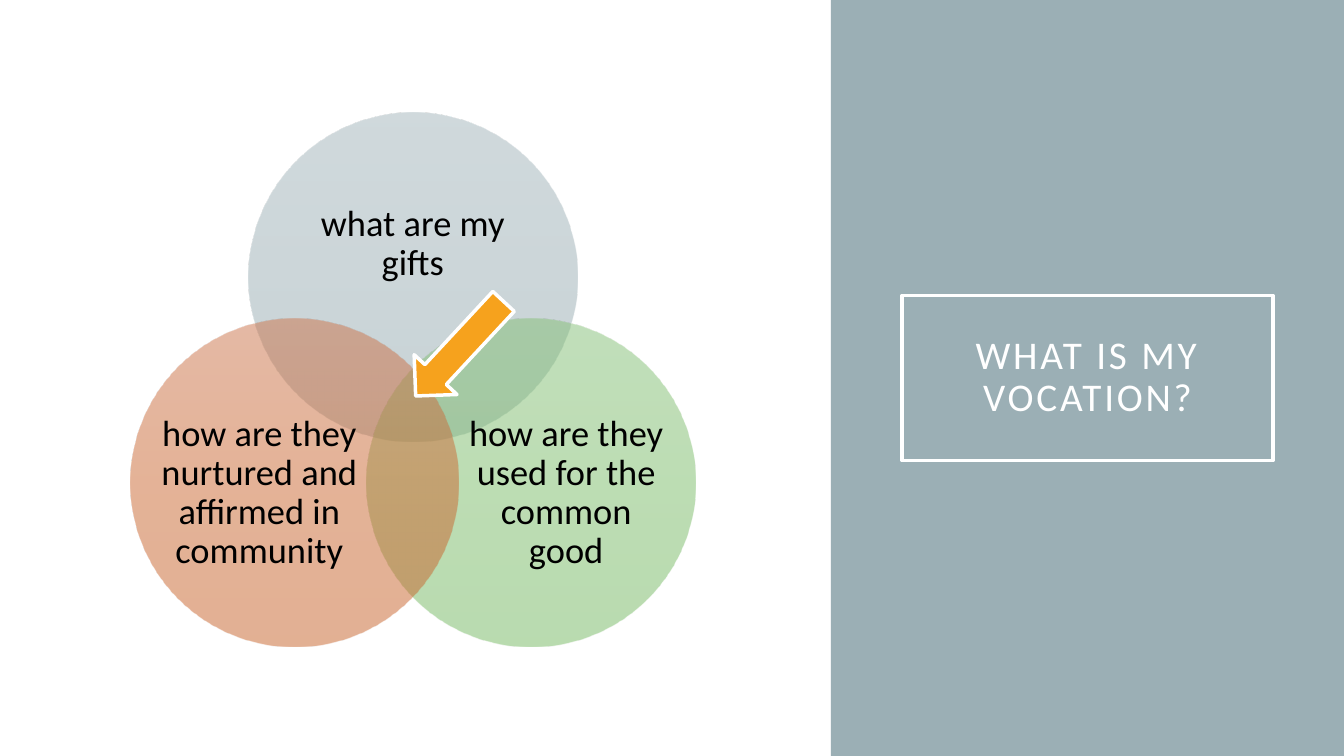
"""Build a slide with a three-circle Venn diagram and a title panel."""
import math
from dataclasses import dataclass

from lxml import etree
from pptx import Presentation
from pptx import util as u
from pptx.dml.color import RGBColor
from pptx.enum import shapes, text
from pptx.oxml import ns


@dataclass(frozen=True)
class Theme:
    """Colours, font and sizes of the slide."""
    panel: str = "9BAFB5"
    white: str = "FFFFFF"
    black: str = "000000"
    arrow: str = "F6A21D"
    gray: tuple = ("A3B5BB", "9BAFB5", "93A9AF")
    green: tuple = ("85C076", "7ABD68", "73B960")
    orange: tuple = ("CC734B", "CB662F", "C86128")
    font: str = "Calibri"
    title_size: float = 28
    label_size: float = 26
    outline: float = 2.5


THEME = Theme()
VENN_CENTER = (294.9, 295.8)
VENN_RADIUS = 97.7
CIRCLE_SIZE = 234.7


def add_figure(slide, kind, box, fill=None, line=None):
    """Add a preset shape with an optional solid fill and outline."""
    shape = slide.shapes.add_shape(kind, *(u.Pt(length) for length in box))
    shape.shadow.inherit = False
    if fill:
        shape.fill.solid()
        shape.fill.fore_color.rgb = RGBColor.from_string(fill)
    else:
        shape.fill.background()
    if line:
        shape.line.color.rgb = RGBColor.from_string(line)
        shape.line.width = u.Pt(THEME.outline)
    else:
        shape.line.fill.background()
    return shape


def set_glass_gradient(shape, colors):
    """Give the shape a half-transparent gradient from top to bottom."""
    properties = shape.fill._xPr
    gradient = etree.Element(ns.qn("a:gradFill"), rotWithShape="1")
    stops = etree.SubElement(gradient, ns.qn("a:gsLst"))
    for index, color in enumerate(colors):
        stop = etree.SubElement(stops, ns.qn("a:gs"), pos=str(index * 50000))
        value = etree.SubElement(stop, ns.qn("a:srgbClr"), val=color)
        etree.SubElement(value, ns.qn("a:alpha"), val="50000")
    etree.SubElement(gradient, ns.qn("a:lin"), ang="5400000", scaled="0")
    properties.replace(properties.find(ns.qn("a:noFill")), gradient)


def write_text(shape, words, size, color, margin=0, spacing=0):
    """Write one centred paragraph into the shape."""
    frame = shape.text_frame
    frame.word_wrap = True
    frame.vertical_anchor = text.MSO_ANCHOR.MIDDLE
    frame.margin_left = frame.margin_right = u.Pt(margin)
    frame.margin_top = frame.margin_bottom = u.Pt(margin)
    paragraph = frame.paragraphs[0]
    paragraph.alignment = text.PP_ALIGN.CENTER
    paragraph.line_spacing = 0.9
    run = paragraph.add_run()
    run.text = words
    run.font.name = THEME.font
    run.font.size = u.Pt(size)
    run.font.color.rgb = RGBColor.from_string(color)
    if spacing:
        run.font._element.set("spc", str(spacing * 100))


def add_venn_circle(slide, angle, colors, words, shift, label_size):
    """Add one circle of the diagram and its label, shifted outwards."""
    center = (VENN_CENTER[0] + VENN_RADIUS * math.cos(math.radians(angle)),
              VENN_CENTER[1] + VENN_RADIUS * math.sin(math.radians(angle)))
    corner = [value - CIRCLE_SIZE / 2 for value in center]
    circle = add_figure(slide, shapes.MSO_SHAPE.OVAL, (*corner, CIRCLE_SIZE, CIRCLE_SIZE))
    set_glass_gradient(circle, colors)
    label_corner = [value + move - length / 2
                    for value, move, length in zip(center, shift, label_size)]
    label = slide.shapes.add_textbox(*(u.Pt(length) for length in (*label_corner, *label_size)))
    write_text(label, words, THEME.label_size, THEME.black)


def main():
    """Build and save the slide."""
    presentation = Presentation()
    presentation.slide_width, presentation.slide_height = u.Pt(960), u.Pt(540)
    slide = presentation.slides.add_slide(presentation.slide_layouts[6])
    preset = shapes.MSO_SHAPE

    add_figure(slide, preset.RECTANGLE, (593.5, 0, 366.5, 540), fill=THEME.panel)
    title = add_figure(slide, preset.RECTANGLE, (644.4, 211, 265, 118), line=THEME.white)
    write_text(title, "WHAT IS MY VOCATION?", THEME.title_size, THEME.white,
               margin=14.4, spacing=2)

    circles = (
        (-90, THEME.gray, "what are my gifts", (0, -23.5), (172, 106)),
        (30, THEME.green, "how are they used for the common good", (25, 7.6), (141, 129)),
        (150, THEME.orange, "how are they nurtured and affirmed in community",
         (-25, 7.6), (141, 129)),
    )
    for circle in circles:
        add_venn_circle(slide, *circle)

    arrow = add_figure(slide, preset.LEFT_ARROW, (282.2, 228.2, 92.2, 41.8),
                       fill=THEME.arrow, line=THEME.white)
    arrow.rotation = 312.9
    presentation.save("out.pptx")


if __name__ == "__main__":
    main()
